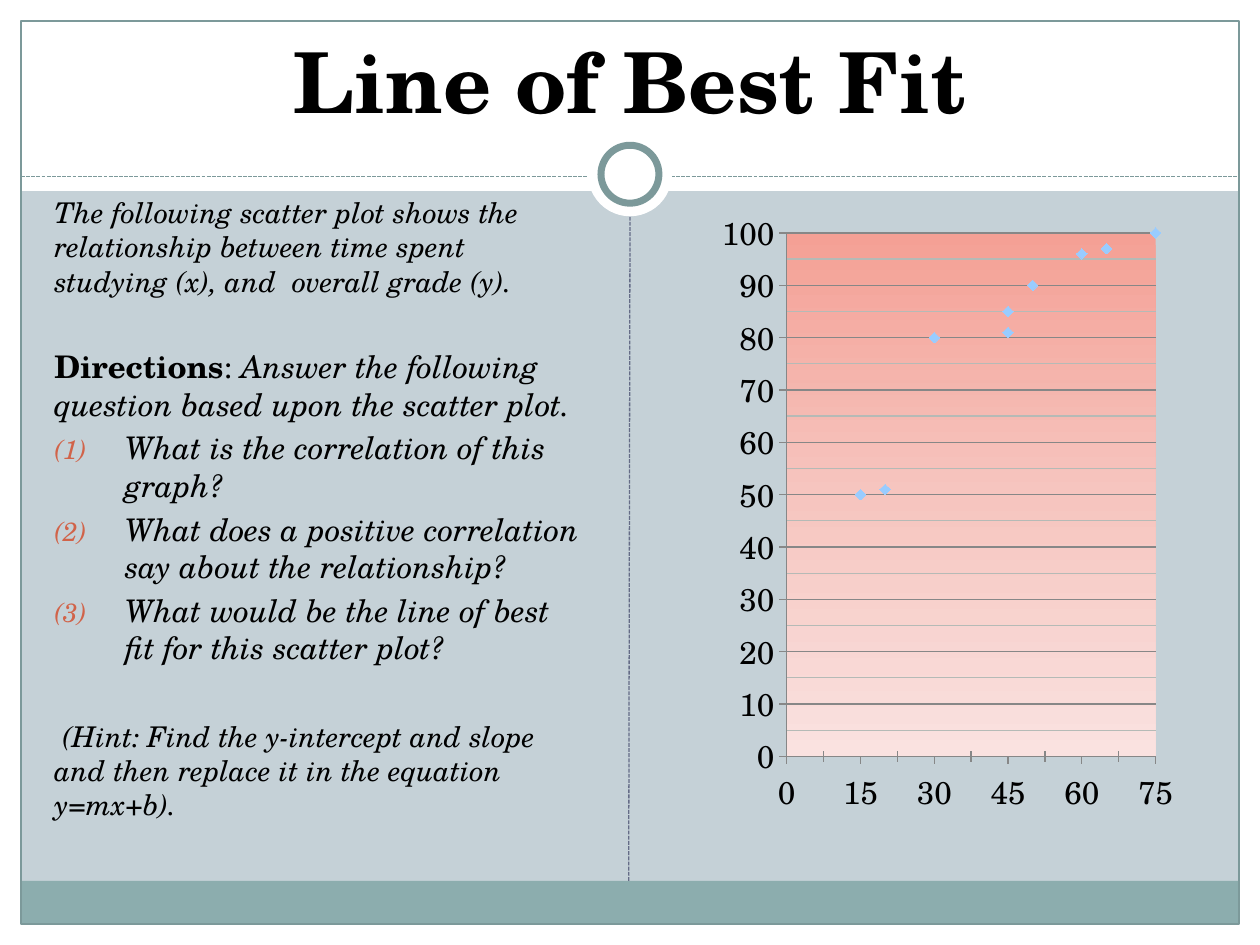
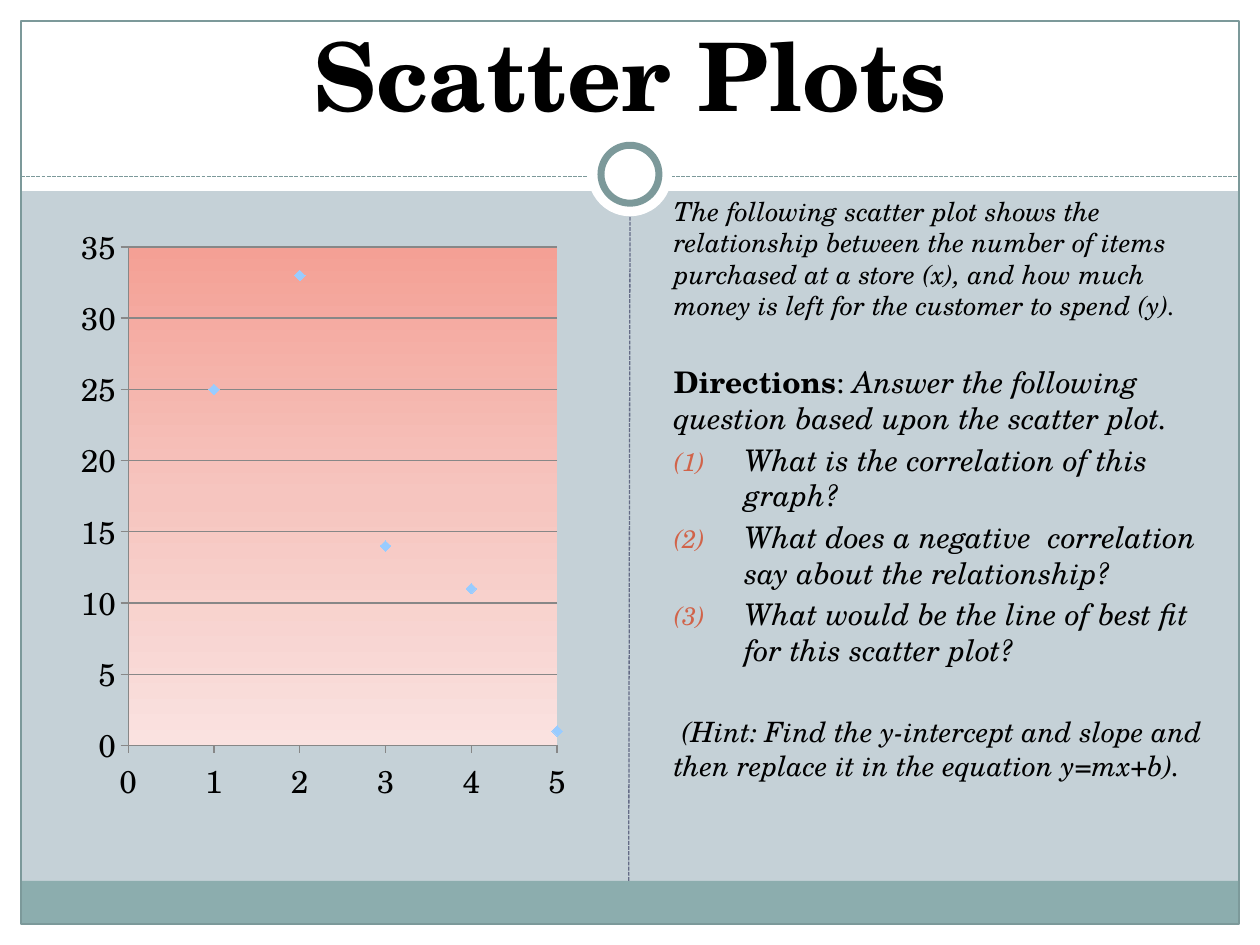
from dataclasses import dataclass

from lxml import etree
from pptx import Presentation
from pptx import util as u
from pptx.chart.data import XyChartData
from pptx.dml.color import RGBColor
from pptx.enum import chart as ch, dml, shapes, text
from pptx.oxml import parse_xml
from pptx.oxml.ns import nsdecls, qn


@dataclass(frozen=True)
class Theme:
    font: str = "TeX Gyre Schola"
    ink: str = "000000"
    paper: str = "FFFFFF"
    ground: str = "C5D1D7"
    band: str = "8CADAE"
    frame: str = "7C999A"
    divider: str = "646B86"
    accent: str = "D16349"
    marker: str = "99CCFF"
    grid: str = "878787"
    minor_grid: str = "B5BAB6"
    plot: tuple = ((0, "F4A095"), (50, "F6C5BF"), (100, "FAE2E0"))
    axis_size: int = 18
    hairline: float = 0.75
    ring: float = 4


T = Theme()
rgb = RGBColor.from_string

# The slide is a grid of 60 columns and 45 rows of equal pitch.
prs = Presentation()
prs.slide_width, prs.slide_height = u.Inches(10), u.Inches(7.5)
COL, ROW = prs.slide_width / 60, prs.slide_height / 45
HEADER, FOOTER = 9.1, 41.95
PANEL_W, PANEL_H = 26.5, 30.75
INDENT = u.Inches(0.56)

# left, top, width, height, preset, fill, line colour, line width
RECT, OVAL = shapes.MSO_SHAPE.RECTANGLE, shapes.MSO_SHAPE.OVAL
BANDS = [
    (0, 44, 60, 1, RECT, T.paper, None, 0),
    (0, 0, 60, HEADER, RECT, T.paper, None, 0),
    (0, 0, 1, 45, RECT, T.paper, None, 0),
    (59, 0, 1, 45, RECT, T.paper, None, 0),
    (1, FOOTER, 58, 44 - FOOTER, RECT, T.band, None, 0),
    (1, 1, 58, 43, RECT, None, T.frame, T.hairline),
]
RINGS = [
    (28, 6.3, 4, 4, OVAL, T.paper, None, 0),
    (28.62, 6.92, 2.76, 2.76, OVAL, T.paper, T.frame, T.ring),
]
HEADER_RULE = (1, 8.4, 59, 8.4, T.frame)
CENTRE_RULE = (29.94, FOOTER, 30, 10.33, T.divider)

DIRECTIONS = "Answer the following question based upon the scatter plot."
HINT = " (Hint: Find the y-intercept and slope and then replace it in the equation y=mx+b)."
QUESTIONS = [
    "What is the correlation of this graph?",
    "What does a {} correlation say about the relationship?",
    "What would be the line of best fit for this scatter plot?",
]

# sizes: type sizes of intro, main part and hint; gaps: type sizes of the
# empty lines left above the directions and above the hint
SLIDES = [
    dict(
        title="Line of Best Fit", title_size=48,
        intro="The following scatter plot shows the relationship between time spent "
              "studying (x), and  overall grade (y).",
        kind="positive", sizes=(16.3, 17.8, 16.3), gaps=(17.8, 19.4),
        text_at=(2, 9), chart_at=(31, 10),
        points=[(30, 80), (50, 90), (15, 50), (20, 51), (45, 81),
                (45, 85), (60, 96), (65, 97), (75, 100)],
        x_axis=(75, 15), y_axis=(100, 10), minor=True,
        plot=(0.244, 0.034, 0.663, 0.812),
    ),
    dict(
        title="Scatter Plots", title_size=54,
        intro="The following scatter plot shows the relationship between the number of "
              "items purchased at a store (x), and how much money is left for the "
              "customer to spend (y).",
        kind="negative ", sizes=(15, 17, 16), gaps=(15, 17),
        text_at=(31.5, 9), chart_at=(2.5, 10.5),
        points=[(1, 25), (2, 33), (3, 14), (4, 11), (5, 1)],
        x_axis=(5, 1), y_axis=(35, 5), minor=False,
        plot=(0.136, 0.041, 0.771, 0.772),
    ),
]


def cells(x, y, w, h):
    """Turn columns and rows into lengths."""
    return [u.Emu(round(n)) for n in (x * COL, y * ROW, w * COL, h * ROW)]


def add_run(p, words, size, **fmt):
    r = p.add_run()
    r.text = words
    r.font.color.rgb = rgb(T.ink)
    for name, value in dict(name=T.font, size=u.Pt(size), **fmt).items():
        setattr(r.font, name, value)


for d in SLIDES:
    s = prs.slides.add_slide(prs.slide_layouts[6])
    s.background.fill.solid()
    s.background.fill.fore_color.rgb = rgb(T.ground)

    # Bands, frame, rules and rings; the rings cover the header rule
    for item in BANDS + [HEADER_RULE] + RINGS + [CENTRE_RULE]:
        if len(item) == 5:
            *ends, colour = item
            cx = s.shapes.add_connector(shapes.MSO_CONNECTOR.STRAIGHT, *cells(*ends))
            cx.line.color.rgb = rgb(colour)
            cx.line.width = u.Pt(T.hairline)
            cx.line.dash_style = dml.MSO_LINE.SQUARE_DOT
            etree.SubElement(cx._element.spPr, qn("a:effectLst"))
            continue
        *box, preset, fill, line, width = item
        sp = s.shapes.add_shape(preset, *cells(*box))
        sp.shadow.inherit = False
        if fill:
            sp.fill.solid()
            sp.fill.fore_color.rgb = rgb(fill)
        else:
            sp.fill.background()
        if line:
            sp.line.color.rgb = rgb(line)
            sp.line.width = u.Pt(width)
        else:
            sp.line.fill.background()

    # Title
    tf = s.shapes.add_textbox(*cells(2, 1.5, 56, 5)).text_frame
    tf.word_wrap = True
    tf.vertical_anchor = text.MSO_ANCHOR.BOTTOM
    p = tf.paragraphs[0]
    p.alignment = text.PP_ALIGN.CENTER
    add_run(p, d["title"], d["title_size"], bold=True)

    # Task text: paragraphs as (runs, type size, empty line above, numbered)
    intro, main, hint = d["sizes"]
    above_directions, above_hint = d["gaps"]
    paragraphs = [
        ([(d["intro"], dict(italic=True))], intro, 0, False),
        ([("Directions", dict(bold=True)), (": ", {}), (DIRECTIONS, dict(italic=True))],
         main, above_directions, False),
        *(([(q.format(d["kind"]), dict(italic=True))], main, 0, True) for q in QUESTIONS),
        ([(HINT, dict(italic=True))], hint, above_hint, False),
    ]
    tf = s.shapes.add_textbox(*cells(*d["text_at"], PANEL_W, PANEL_H)).text_frame
    tf.word_wrap = True
    for i, (runs, size, gap, numbered) in enumerate(paragraphs):
        p = tf.add_paragraph() if i else tf.paragraphs[0]
        p.space_before = u.Pt(round(0.2 * size + 1.4 * gap, 1))
        for words, fmt in runs:
            add_run(p, words, size, **fmt)
        if numbered:
            pPr = p._p.get_or_add_pPr()
            pPr.set("marL", str(INDENT))
            pPr.set("indent", str(-INDENT))
            colour = etree.SubElement(pPr, qn("a:buClr"))
            etree.SubElement(colour, qn("a:srgbClr"), val=T.accent)
            etree.SubElement(pPr, qn("a:buSzPct"), val="85000")
            etree.SubElement(pPr, qn("a:buFont"), typeface=T.font)
            etree.SubElement(pPr, qn("a:buAutoNum"), type="arabicParenBoth")

    # Scatter plot
    data = XyChartData()
    series = data.add_series("Series 1")
    for x, y in d["points"]:
        series.add_data_point(x, y)
    chart = s.shapes.add_chart(ch.XL_CHART_TYPE.XY_SCATTER,
                               *cells(*d["chart_at"], PANEL_W, PANEL_H), data).chart
    chart.has_title = chart.has_legend = False
    chart.font.name, chart.font.size = T.font, u.Pt(T.axis_size)
    chart.font.color.rgb = rgb(T.ink)

    plot = chart.plots[0]
    plot.vary_by_categories = False
    ser = plot.series[0]
    ser.smooth = False
    ser.format.line.fill.background()
    ser.marker.style, ser.marker.size = ch.XL_MARKER_STYLE.DIAMOND, 6
    ser.marker.format.fill.solid()
    ser.marker.format.fill.fore_color.rgb = rgb(T.marker)
    ser.marker.format.line.fill.background()

    x_axis, y_axis = chart.category_axis, chart.value_axis
    for axis, (top, step) in ((x_axis, d["x_axis"]), (y_axis, d["y_axis"])):
        fmt = dict(minimum_scale=0, maximum_scale=top, major_unit=step,
                   minor_unit=step / 2, major_tick_mark=ch.XL_TICK_MARK.OUTSIDE,
                   minor_tick_mark=ch.XL_TICK_MARK.NONE,
                   has_major_gridlines=axis is y_axis,
                   has_minor_gridlines=axis is y_axis and d["minor"])
        for name, value in fmt.items():
            setattr(axis, name, value)
        axis.tick_labels.number_format = "General"
        axis.tick_labels.number_format_is_linked = False
        axis.format.line.color.rgb = rgb(T.grid)
    y_axis.major_gridlines.format.line.color.rgb = rgb(T.grid)
    if d["minor"]:
        x_axis.minor_tick_mark = ch.XL_TICK_MARK.CROSS
        y_axis._element.find(qn("c:minorGridlines")).append(parse_xml(
            f'<c:spPr {nsdecls("c", "a")}><a:ln><a:solidFill>'
            f'<a:srgbClr val="{T.minor_grid}"/></a:solidFill></a:ln></c:spPr>'))

    # Inner plot position and gradient
    area = chart._chartSpace.chart.plotArea
    for old in area.findall(qn("c:layout")):
        area.remove(old)
    places = "".join(f'<c:{k} val="{v}"/>' for k, v in zip("xywh", d["plot"]))
    area.insert(0, parse_xml(
        f'<c:layout {nsdecls("c")}><c:manualLayout><c:layoutTarget val="inner"/>'
        f'<c:xMode val="edge"/><c:yMode val="edge"/>{places}'
        f'</c:manualLayout></c:layout>'))
    stops = "".join(f'<a:gs pos="{at * 1000}"><a:srgbClr val="{c}"/></a:gs>'
                    for at, c in T.plot)
    area.append(parse_xml(
        f'<c:spPr {nsdecls("c", "a")}><a:gradFill><a:gsLst>{stops}</a:gsLst>'
        f'<a:lin ang="5400000" scaled="0"/></a:gradFill></c:spPr>'))

prs.save("out.pptx")
